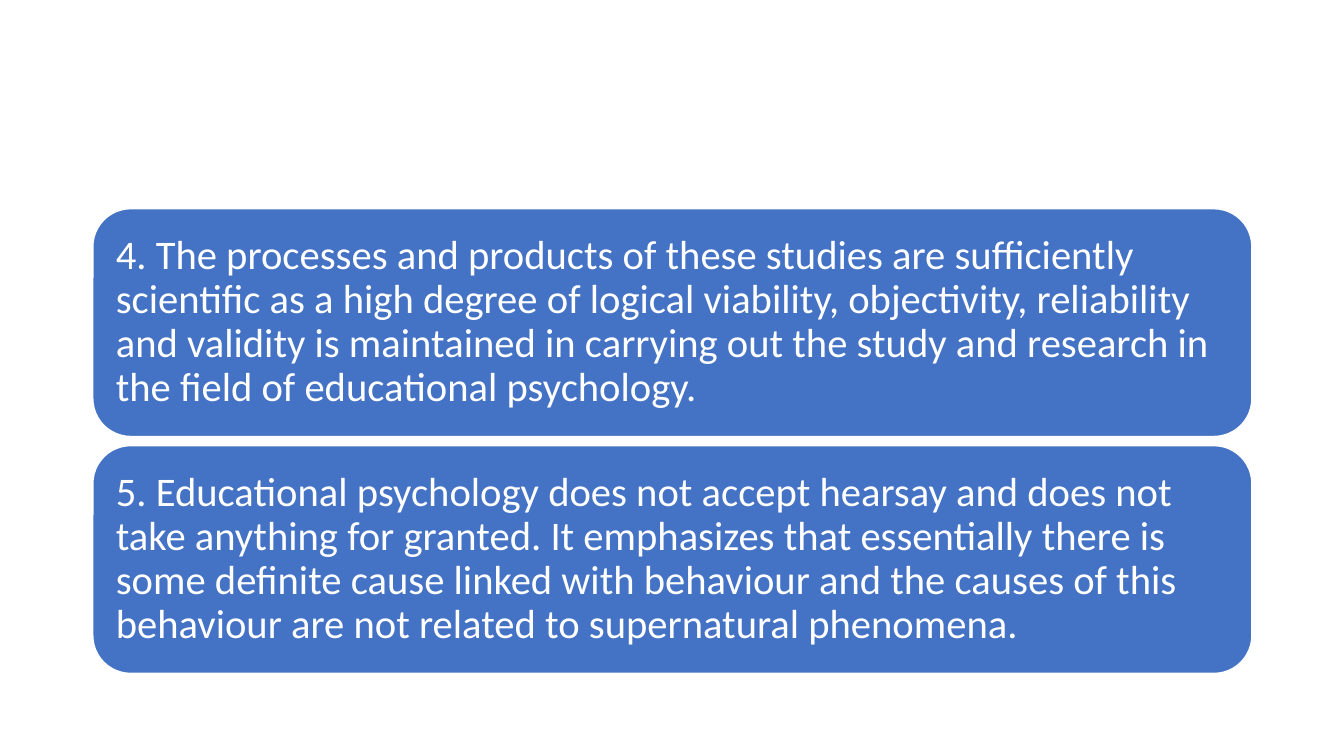
"""Build a slide with two numbered statements on educational psychology."""
from dataclasses import dataclass

from pptx import Presentation
from pptx.dml.color import RGBColor
from pptx.enum.shapes import MSO_SHAPE
from pptx.enum.text import MSO_ANCHOR, PP_ALIGN
from pptx.util import Cm, Pt

ROUNDED = MSO_SHAPE.ROUNDED_RECTANGLE
MIDDLE = MSO_ANCHOR.MIDDLE
LEFT = PP_ALIGN.LEFT

BLUE = "4472C4"
WHITE = "FFFFFF"

CARD_LEFT = 2.34
FIRST_CARD_TOP = 5.26
CARD_WIDTH = 29.21
CARD_HEIGHT = 5.74
CARD_GAP = 0.23
CARD_INSET = 0.3


@dataclass(frozen=True)
class Card:
    text: str
    top: float


STATEMENTS = (
    "4. The processes and products of these studies are sufficiently scientific "
    "as a high degree of logical viability, objectivity, reliability and validity "
    "is maintained in carrying out the study and research in the field of "
    "educational psychology.",
    "5. Educational psychology does not accept hearsay and does not take anything "
    "for granted. It emphasizes that essentially there is some definite cause "
    "linked with behaviour and the causes of this behaviour are not related to "
    "supernatural phenomena.",
)


def color(value: str) -> RGBColor:
    return RGBColor.from_string(value)


def write_text(frame, text: str, *, size: float, font: str, fill: str,
               inset: float, line_spacing: float) -> None:
    frame.word_wrap = True
    frame.vertical_anchor = MIDDLE
    frame.margin_left = frame.margin_right = Cm(inset)
    frame.margin_top = frame.margin_bottom = Cm(inset)
    paragraph = frame.paragraphs[0]
    paragraph.alignment = LEFT
    paragraph.line_spacing = line_spacing
    run = paragraph.add_run()
    run.text = text
    run.font.size = Pt(size)
    run.font.name = font
    run.font.color.rgb = color(fill)


def draw_card(slide, card: Card) -> None:
    shape = slide.shapes.add_shape(ROUNDED, Cm(CARD_LEFT), Cm(card.top),
                                   Cm(CARD_WIDTH), Cm(CARD_HEIGHT))
    shape.shadow.inherit = False
    shape.fill.solid()
    shape.fill.fore_color.rgb = color(BLUE)
    shape.line.color.rgb = color(WHITE)
    shape.line.width = Pt(1)
    write_text(shape.text_frame, card.text, size=29, font="Calibri", fill=WHITE,
               inset=CARD_INSET, line_spacing=0.9)


def main() -> None:
    presentation = Presentation()
    presentation.slide_width = Cm(33.87)
    presentation.slide_height = Cm(19.05)
    slide = presentation.slides.add_slide(presentation.slide_layouts[6])
    for index, text in enumerate(STATEMENTS):
        draw_card(slide, Card(text, FIRST_CARD_TOP + index * (CARD_HEIGHT + CARD_GAP)))
    presentation.save("out.pptx")


if __name__ == "__main__":
    main()
